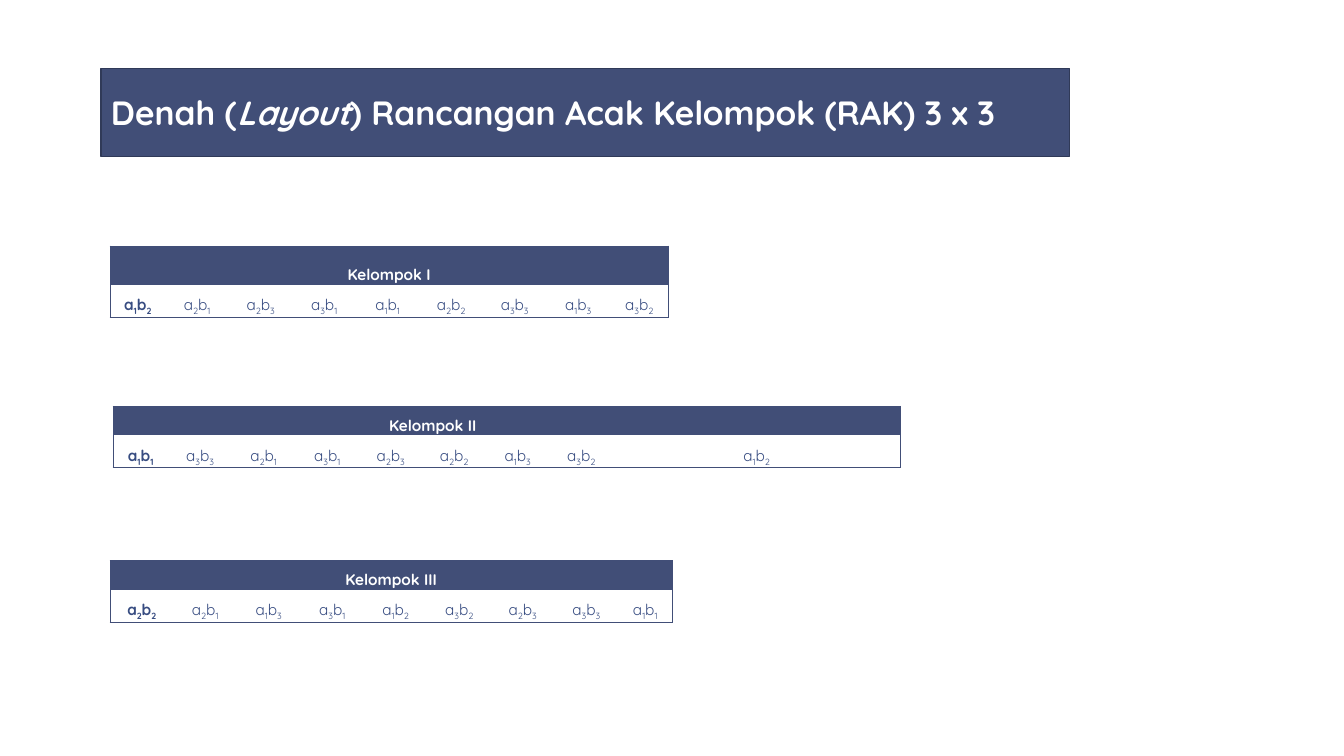
"""Builds the layout slide of a 3 x 3 randomised block design."""
from dataclasses import dataclass

from lxml import etree
from pptx import Presentation
from pptx.dml.color import RGBColor
from pptx.enum.text import MSO_ANCHOR, MSO_AUTO_SIZE, PP_ALIGN
from pptx.oxml.ns import qn
from pptx.util import Inches, Pt

CENTER, LEFT = PP_ALIGN.CENTER, PP_ALIGN.LEFT
MIDDLE, TOP = MSO_ANCHOR.MIDDLE, MSO_ANCHOR.TOP
NO_FIT = MSO_AUTO_SIZE.NONE
TITLE_ONLY = 5
NO_STYLE = "{2D5ABB26-0587-4C30-8999-92F81FD0307C}"
GRID = 0.1
PLOT_COL, BODY_ROW = 6.3, 3.2


@dataclass(frozen=True)
class Theme:
    """Colours, font and type sizes of the slide."""
    navy: str = "414E77"
    edge: str = "303A58"
    label: str = "374C81"
    white: str = "FFFFFF"
    font: str = "Quicksand"
    title: int = 24
    cell: int = 11
    rule: float = 0.5


@dataclass(frozen=True)
class Group:
    """One block: its place in grid units, header shape and plot order."""
    name: str
    left: float
    top: float
    first_col: float
    last_col: float
    header_row: float
    spacing: float
    plots: str
    indent: float = 0


THEME = Theme()
GROUPS = [
    Group("Kelompok I", 10.9, 24.4, 5.5, 5.8, 3.8, 2,
          "a1b2 a2b1 a2b3 a3b1 a1b1 a2b2 a3b3 a1b3 a3b2"),
    Group("Kelompok II", 11.2, 40.3, 5.5, 5.9, 2.9, 1.5,
          "a1b1 a3b3 a2b1 a3b1 a2b3 a2b2 a1b3 a3b2 a1b2", 26.7),
    Group("Kelompok III", 10.9, 55.6, 6.3, 5.4, 2.9, 1.5,
          "a2b2 a2b1 a1b3 a3b1 a1b2 a3b2 a2b3 a3b3 a1b1"),
]


def units(n):
    """Turn grid units into a length."""
    return Inches(n * GRID)


def add_run(p, text, size, color, bold=False, italic=False, sub=False):
    """Append one formatted run to a paragraph."""
    r = p.add_run()
    r.text = text
    r.font.name, r.font.size = THEME.font, Pt(size)
    r.font.bold, r.font.italic = bold, italic
    r.font.color.rgb = RGBColor.from_string(color)
    if sub:
        r.font._element.set("baseline", "-25000")


def add_title(s, parts):
    """Shape the title placeholder as a rounded bar and fill in its runs."""
    sp = s.shapes.title
    sp.left, sp.top, sp.width, sp.height = map(units, (10, 6.8, 96.1, 8.7))
    geom = etree.Element(qn("a:prstGeom"), prst="roundRect")
    etree.SubElement(geom, qn("a:avLst"))
    sp._element.spPr.find(qn("a:xfrm")).addnext(geom)
    sp.fill.solid()
    sp.fill.fore_color.rgb = RGBColor.from_string(THEME.navy)
    sp.line.color.rgb = RGBColor.from_string(THEME.edge)
    sp.line.width = Pt(1)
    tf = sp.text_frame
    tf.word_wrap, tf.auto_size = True, NO_FIT
    tf.vertical_anchor = MIDDLE
    p = tf.paragraphs[0]
    p.alignment = LEFT
    for text, italic in parts:
        add_run(p, text, THEME.title, THEME.white, True, italic)


def set_borders(cell, sides):
    """Draw thin rules on the given sides, a string out of L, R, T and B."""
    tc_pr = cell._tc.get_or_add_tcPr()
    for i, side in enumerate(sides):
        ln = etree.Element(qn("a:ln" + side), w=str(Pt(THEME.rule)))
        fill = etree.SubElement(ln, qn("a:solidFill"))
        etree.SubElement(fill, qn("a:srgbClr"), val=THEME.navy)
        tc_pr.insert(i, ln)


def format_cell(cell, spacing, alignment=CENTER, indent=0):
    """Set margins and spacing of a cell and return its paragraph."""
    cell.margin_left = units(0.7 + indent)
    cell.margin_right = units(0.7)
    cell.margin_top = cell.margin_bottom = 0
    cell.vertical_anchor = TOP
    p = cell.text_frame.paragraphs[0]
    p.alignment, p.line_spacing = alignment, spacing
    return p


def add_header(table, group, last):
    """Merge and fill the header row that names the group."""
    head = table.cell(0, 0)
    head.merge(table.cell(0, last))
    for c in range(last + 1):
        cell = table.cell(0, c)
        cell.fill.solid()
        cell.fill.fore_color.rgb = RGBColor.from_string(THEME.navy)
        set_borders(cell, {0: "LRT", last: "RT"}.get(c, "T"))
    alignment = LEFT if group.indent else CENTER
    p = format_cell(head, group.spacing, alignment, group.indent)
    add_run(p, group.name, THEME.cell, THEME.white, True)


def add_plot(cell, plot, bold, sides):
    """Write a treatment code with its digits as subscripts."""
    cell.fill.background()
    set_borders(cell, sides)
    p = format_cell(cell, 1.5)
    for mark in plot:
        add_run(p, mark, THEME.cell, THEME.label, bold, sub=mark.isdigit())


def add_group(s, group):
    """Add the table of one group."""
    plots = group.plots.split()
    last = len(plots) - 1
    widths = [group.first_col] + [PLOT_COL] * (last - 1) + [group.last_col]
    rows = [group.header_row, BODY_ROW]
    frame = s.shapes.add_table(
        len(rows), len(plots), units(group.left), units(group.top),
        units(sum(widths)), units(sum(rows)))
    table = frame.table
    table._tbl.tblPr.find(qn("a:tableStyleId")).text = NO_STYLE
    table.first_row = table.horz_banding = False
    for column, width in zip(table.columns, widths):
        column.width = units(width)
    for row, height in zip(table.rows, rows):
        row.height = units(height)
    add_header(table, group, last)
    for c, plot in enumerate(plots):
        sides = {0: "LB", last: "RB"}.get(c, "B")
        add_plot(table.cell(1, c), plot, c == 0, sides)


def main():
    """Build and save the slide."""
    prs = Presentation()
    prs.slide_width, prs.slide_height = Inches(13.33), Inches(7.5)
    s = prs.slides.add_slide(prs.slide_layouts[TITLE_ONLY])
    for group in GROUPS:
        add_group(s, group)
    add_title(s, [("Denah (", False), ("Layout", True),
                  (") Rancangan Acak Kelompok (RAK) 3 x 3", False)])
    prs.save("out.pptx")


if __name__ == "__main__":
    main()
